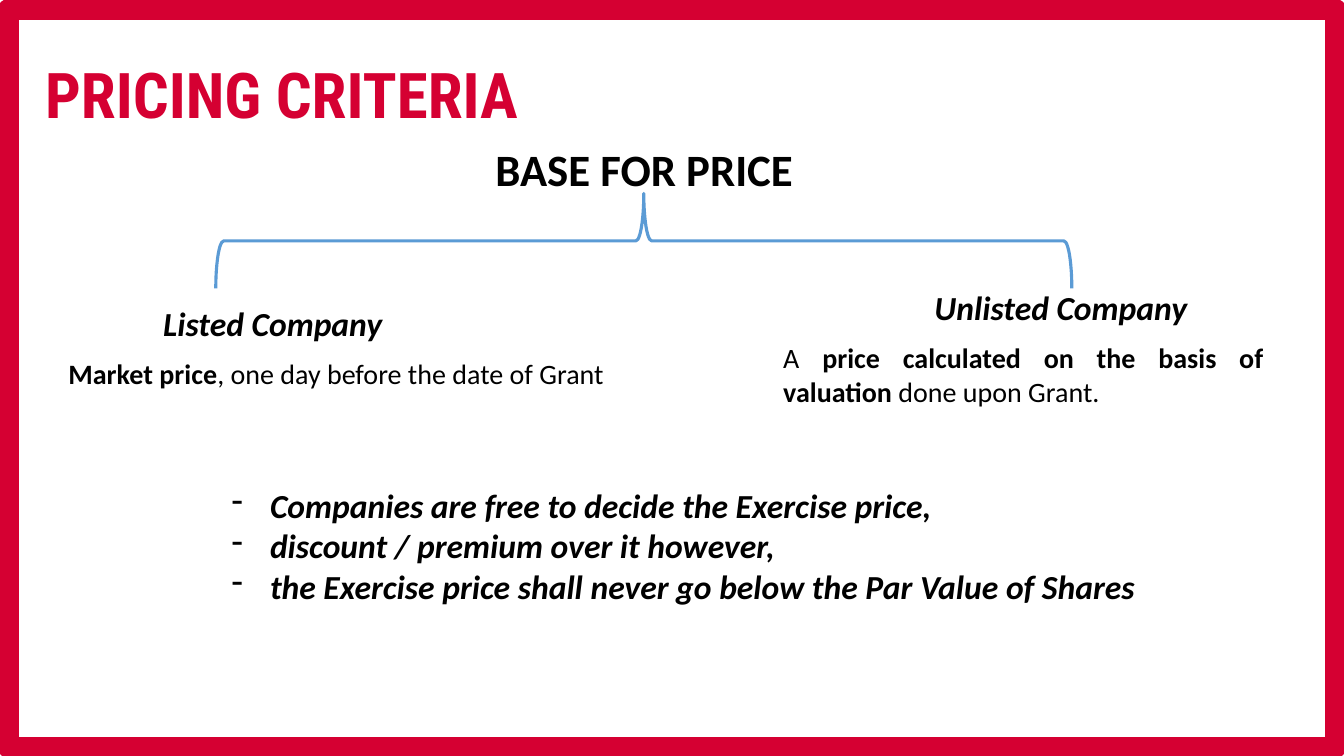
from lxml import etree
from pptx import Presentation, util as u
from pptx.dml.color import RGBColor
from pptx.enum import shapes, text
from pptx.oxml.ns import qn

W, H = 13.33, 7.5
RED, BLUE, BLACK = "D50032", "5B9BD5", "000000"
JUSTIFY = text.PP_ALIGN.JUSTIFY


def color(value):
    return RGBColor.from_string(value)


def add_outline(s, kind, box, line, width):
    sp = s.shapes.add_shape(kind, *map(u.Inches, box))
    sp.shadow.inherit = False
    sp.fill.background()
    sp.line.color.rgb = color(line)
    sp.line.width = u.Pt(width)
    return sp


def add_text(s, box, paragraphs, size, font="Calibri", fill=BLACK,
             italic=False, align=text.PP_ALIGN.LEFT, wrap=True, dash=False):
    tf = s.shapes.add_textbox(*map(u.Inches, box)).text_frame
    tf.word_wrap = wrap
    for i, runs in enumerate(paragraphs):
        p = tf.add_paragraph() if i else tf.paragraphs[0]
        p.alignment = align
        if dash:
            pPr = p._p.get_or_add_pPr()
            pPr.set("marL", str(u.Inches(0.38)))
            pPr.set("indent", str(-u.Inches(0.38)))
            etree.SubElement(pPr, qn("a:buFontTx"))
            etree.SubElement(pPr, qn("a:buChar")).set("char", "-")
        for words, bold in runs:
            r = p.add_run()
            r.text = words
            r.font.name, r.font.size = font, u.Pt(size)
            r.font.bold, r.font.italic = bold, italic
            r.font.color.rgb = color(fill)


def add_frame(s, box):
    x, y, w, h = box
    add_outline(s, shapes.MSO_SHAPE.RECTANGLE, box, RED, 15)
    add_text(s, (x + 0.27, y + 0.41, 9.74, 0.86),
             [[("PRICING CRITERIA", True)]], 45, "Roboto Condensed", RED)


def add_base(s, box):
    x, y, w, h = box
    add_text(s, (x - 0.25, y, 9, 0.64), [[("BASE FOR PRICE", True)]], 32,
             align=text.PP_ALIGN.CENTER)
    depth = 0.94
    brace = (x + (w - depth) / 2, y + h - (depth + w) / 2, depth, w)
    sp = add_outline(s, shapes.MSO_SHAPE.RIGHT_BRACE, brace, BLUE, 2.25)
    sp.rotation = 270


def add_company(s, box, name, indent, name_width, runs):
    x, y, w, h = box
    add_text(s, (x + indent, y, name_width, 0.5), [[(name, True)]], 24,
             italic=True, wrap=False)
    add_text(s, (x, y + 0.53, w, h - 0.53), [runs], 20, align=JUSTIFY)


def add_rules(s, box, rules):
    add_text(s, box, [[(rule, True)] for rule in rules], 24, italic=True,
             align=JUSTIFY, dash=True)


def main():
    prs = Presentation()
    prs.slide_width, prs.slide_height = u.Inches(W), u.Inches(H)
    s = prs.slides.add_slide(prs.slide_layouts[6])
    add_frame(s, (0.08, 0.09, W - 0.16, H - 0.17))
    add_base(s, (2.14, 1.36, 8.49, 1.5))
    add_company(s, (0.58, 2.96, 5.89, 0.97), "Listed Company", 0.94, 2.39,
                [("Market price", True),
                 (", one day before the date of Grant", False)])
    add_company(s, (7.67, 2.8, 4.96, 1.3), "Unlisted Company", 1.5, 2.73,
                [("A ", False),
                 ("price calculated on the basis of valuation", True),
                 (" done upon Grant.", False)])
    add_rules(s, (2.2, 4.76, 10.43, 1.31),
              ["Companies are free to decide the Exercise price,",
               "discount / premium over it however,",
               "the Exercise price shall never go below the Par Value of Shares"])
    prs.save("out.pptx")


if __name__ == "__main__":
    main()
